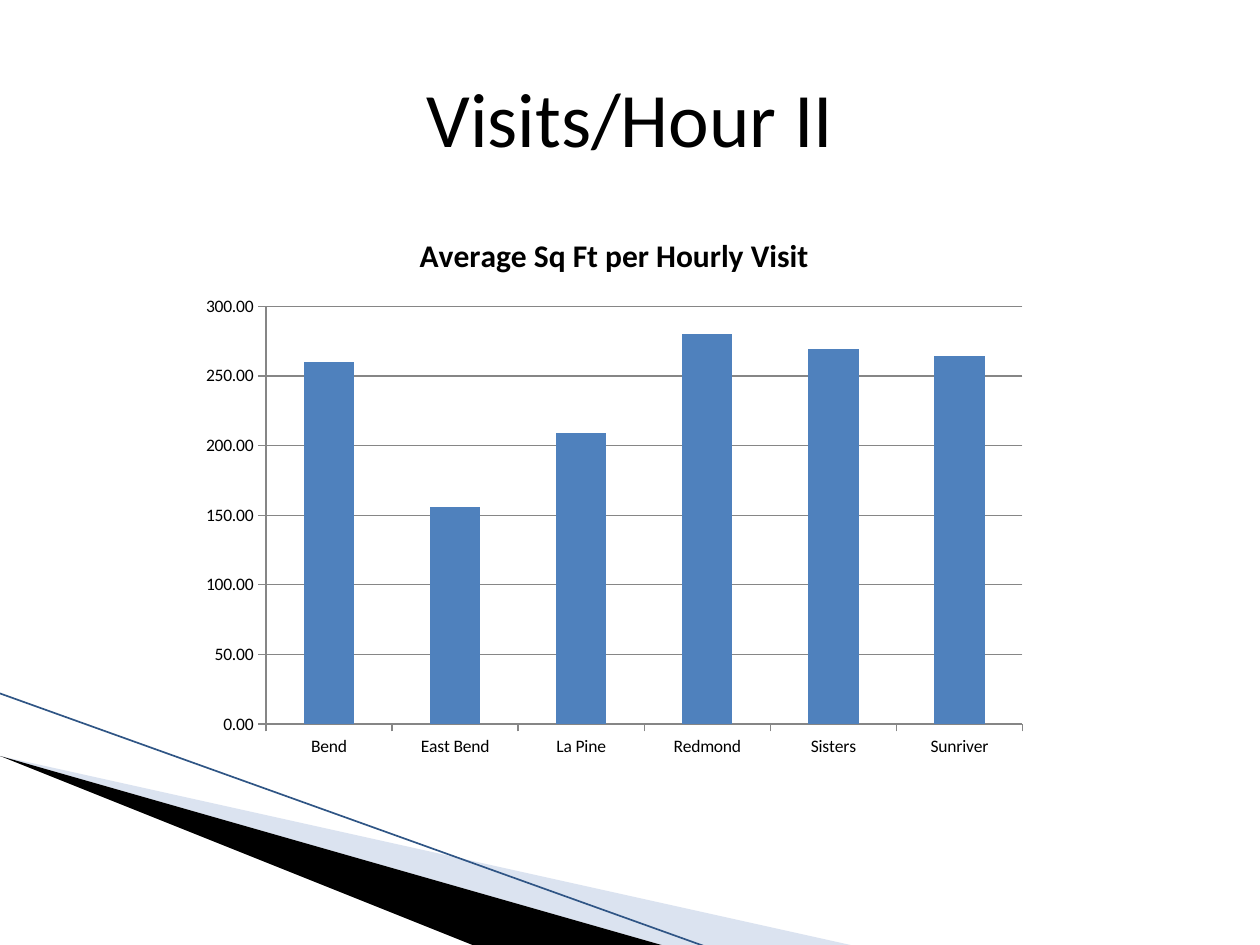
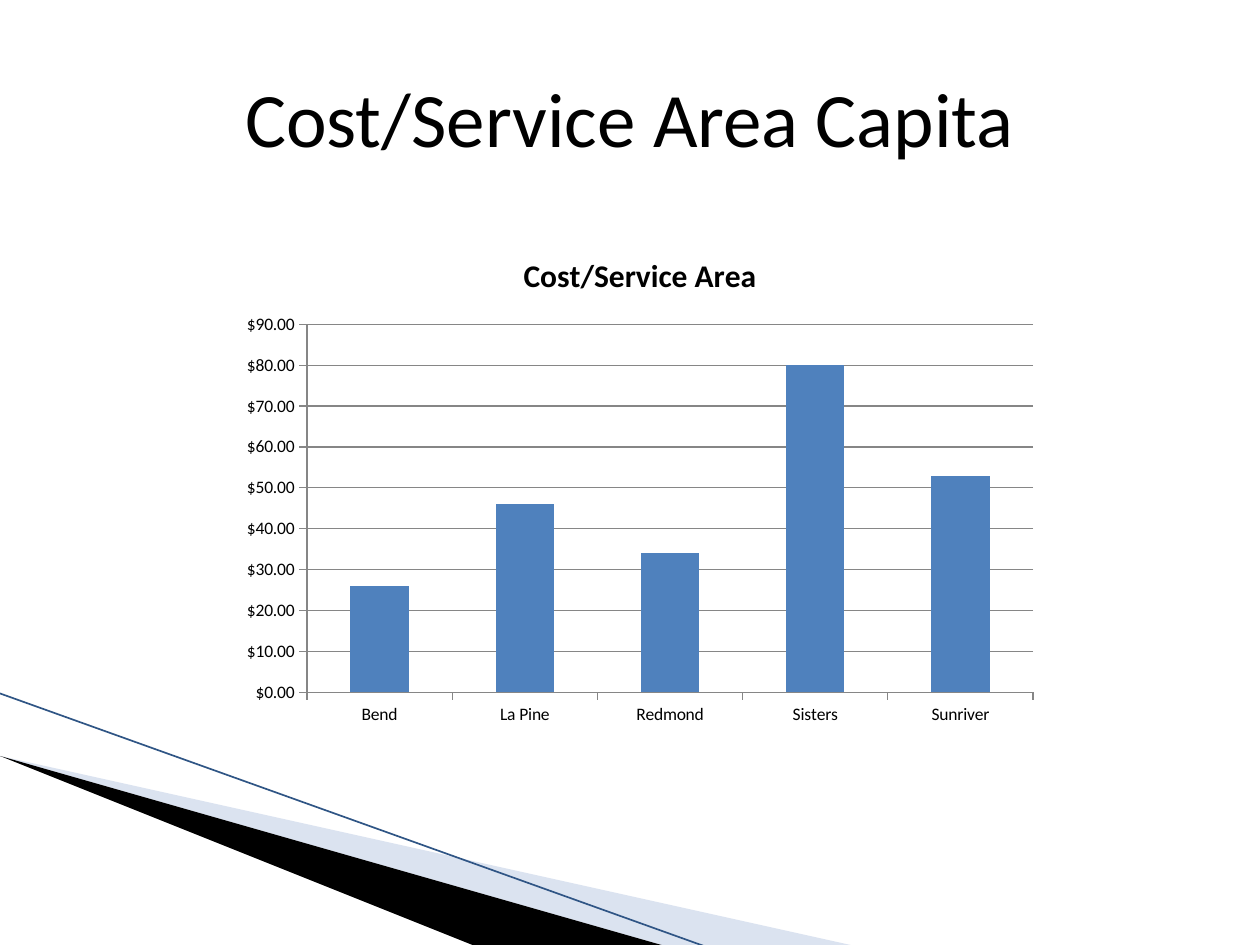
from lxml import etree
from pptx import Presentation
from pptx.chart.data import CategoryChartData
from pptx.dml.color import RGBColor
from pptx.enum.chart import XL_CHART_TYPE, XL_TICK_MARK
from pptx.enum.shapes import MSO_CONNECTOR
from pptx.enum.text import MSO_ANCHOR, PP_ALIGN
from pptx.oxml.ns import qn
from pptx.util import Inches, Pt

COLUMNS = XL_CHART_TYPE.COLUMN_CLUSTERED
TICK_OUTSIDE = XL_TICK_MARK.OUTSIDE
STRAIGHT = MSO_CONNECTOR.STRAIGHT
MIDDLE = MSO_ANCHOR.MIDDLE
CENTER = PP_ALIGN.CENTER

FONT = "Calibri"
COLORS = {
    "background": "FFFFFF",
    "text": "000000",
    "pale_wedge": "A7B9DB",
    "dark_wedge": "000000",
    "wedge_line": "2F5585",
    "column": "4F81BD",
    "grid": "868686",
}
PALE_WEDGE = [(0, 5.59), (9, 7.5), (6.68, 7.5), (0, 5.58)]
DARK_WEDGE = [(0, 5.58), (6.91, 7.51), (5.46, 7.52), (0.01, 5.6)]


def color(name):
    return RGBColor.from_string(COLORS[name])


def format_font(font, size, bold=False):
    font.name = FONT
    font.size = Pt(size)
    font.bold = bold
    font.color.rgb = color("text")


def write_text(text_frame, text, size=18, bold=False, align=CENTER):
    text_frame.text = text
    paragraph = text_frame.paragraphs[0]
    paragraph.alignment = align
    format_font(paragraph.runs[0].font, size, bold)


class Deck:
    def __init__(self):
        self.presentation = Presentation()
        self.presentation.slide_width = Inches(10)
        self.presentation.slide_height = Inches(7.5)
        self.slide = None

    def add_slide(self, title):
        layout = self.presentation.slide_layouts.get_by_name("Title Only")
        self.slide = self.presentation.slides.add_slide(layout)
        background = self.slide.background.fill
        background.solid()
        background.fore_color.rgb = color("background")
        self.add_wedge(PALE_WEDGE, "pale_wedge", opacity=40)
        self.add_wedge(DARK_WEDGE, "dark_wedge")
        self.add_line((-0.01, 5.5), (5.62, 7.52), "wedge_line", 0.95)
        self.set_title(title)

    def set_title(self, text):
        title = self.slide.shapes.title
        title.left, title.top = Inches(0.5), Inches(0.3)
        title.width, title.height = Inches(9), Inches(1.25)
        title.text_frame.vertical_anchor = MIDDLE
        write_text(title.text_frame, text, size=44)

    def add_wedge(self, points, color_name, opacity=100):
        builder = self.slide.shapes.build_freeform(*points[0], scale=Inches(1))
        builder.add_line_segments(points[1:], close=True)
        shape = builder.convert_to_shape()
        shape.shadow.inherit = False
        shape.line.fill.background()
        shape.fill.solid()
        shape.fill.fore_color.rgb = color(color_name)
        if opacity < 100:
            fill_color = shape.element.xpath("./p:spPr/a:solidFill/a:srgbClr")[0]
            alpha = etree.SubElement(fill_color, qn("a:alpha"))
            alpha.set("val", str(opacity * 1000))

    def add_line(self, start, end, color_name, width):
        ends = [Inches(value) for value in (*start, *end)]
        connector = self.slide.shapes.add_connector(STRAIGHT, *ends)
        connector.line.color.rgb = color(color_name)
        connector.line.width = Pt(width)
        properties = connector.element.xpath("./p:spPr")[0]
        etree.SubElement(properties, qn("a:effectLst"))

    def add_column_chart(self, box, title, series_name, values, number_format, maximum, step):
        data = CategoryChartData()
        data.categories = list(values)
        data.add_series(series_name, list(values.values()))
        position = [Inches(value) for value in box]
        chart = self.slide.shapes.add_chart(COLUMNS, *position, data).chart
        format_font(chart.font, 10)
        chart.has_legend = False
        chart.has_title = True
        write_text(chart.chart_title.text_frame, title, size=18, bold=True)
        chart.chart_title.include_in_layout = False

        plot = chart.plots[0]
        plot.gap_width = 150
        plot.vary_by_categories = False
        columns = plot.series[0].format.fill
        columns.solid()
        columns.fore_color.rgb = color("column")

        value_axis = chart.value_axis
        value_axis.minimum_scale = 0
        value_axis.maximum_scale = maximum
        value_axis.major_unit = step
        value_axis.has_major_gridlines = True
        value_axis.tick_labels.number_format = number_format
        value_axis.tick_labels.number_format_is_linked = False
        for axis in (chart.category_axis, value_axis):
            axis.major_tick_mark = TICK_OUTSIDE
        for part in (chart.category_axis, value_axis, value_axis.major_gridlines):
            part.format.line.color.rgb = color("grid")
            part.format.line.width = Pt(0.75)


def main():
    deck = Deck()

    deck.add_slide("Visits/Hour II")
    deck.add_column_chart(
        box=(1.5, 1.67, 6.75, 4.42),
        title="Average Sq Ft per Hourly Visit",
        series_name="Average Sq Ft per Hourly Visit",
        values={"Bend": 260, "East Bend": 156, "La Pine": 209,
                "Redmond": 280, "Sisters": 269, "Sunriver": 264},
        number_format="0.00", maximum=300, step=50)

    deck.add_slide("Cost/Service Area Capita")
    deck.add_column_chart(
        box=(1.83, 1.83, 6.5, 4),
        title="Cost/Service Area",
        series_name="Series 1",
        values={"Bend": 26, "La Pine": 46, "Redmond": 34,
                "Sisters": 80, "Sunriver": 53},
        number_format='"$"#,##0.00', maximum=90, step=10)

    deck.presentation.save("out.pptx")


if __name__ == "__main__":
    main()
